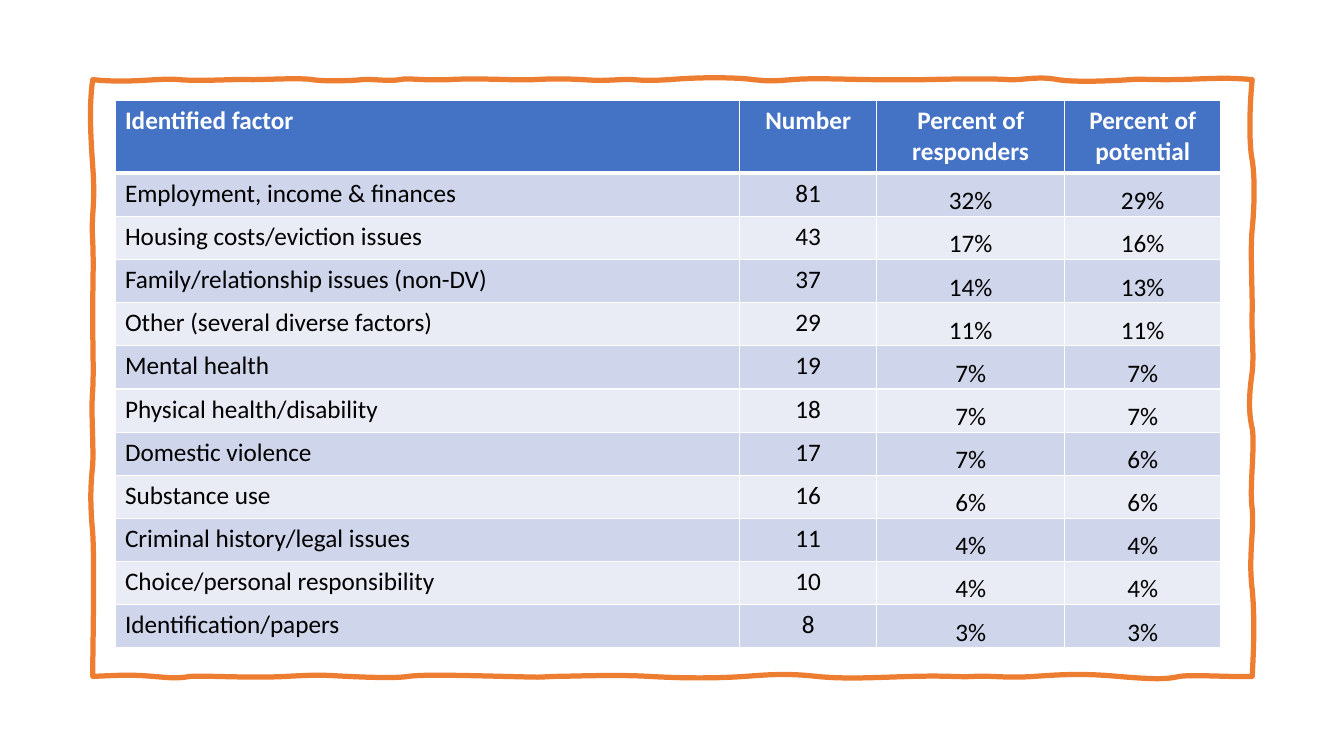
from dataclasses import dataclass

from lxml import etree
from pptx import Presentation
from pptx.dml.color import RGBColor
from pptx.enum.text import MSO_ANCHOR, PP_ALIGN
from pptx.oxml.ns import qn
from pptx.util import Inches, Pt

LEFT, CENTER = PP_ALIGN.LEFT, PP_ALIGN.CENTER
TOP, BOTTOM = MSO_ANCHOR.TOP, MSO_ANCHOR.BOTTOM


@dataclass(frozen=True)
class Theme:
    font: str = "Calibri"
    size: float = 18
    frame: str = "ED7D31"
    frame_width: float = 3.75
    header: str = "4472C4"
    bands: tuple = ("CFD5EA", "E9EBF5")
    text: str = "000000"
    white: str = "FFFFFF"
    rule: float = 1
    header_rule: float = 3


THEME = Theme()

HEADERS = ("Identified factor", "Number", "Percent of responders", "Percent of potential")
FACTORS = [
    ("Employment, income & finances", "81", "32%", "29%"),
    ("Housing costs/eviction issues", "43", "17%", "16%"),
    ("Family/relationship issues (non-DV)", "37", "14%", "13%"),
    ("Other (several diverse factors)", "29", "11%", "11%"),
    ("Mental health", "19", "7%", "7%"),
    ("Physical health/disability", "18", "7%", "7%"),
    ("Domestic violence", "17", "7%", "6%"),
    ("Substance use", "16", "6%", "6%"),
    ("Criminal history/legal issues", "11", "4%", "4%"),
    ("Choice/personal responsibility", "10", "4%", "4%"),
    ("Identification/papers", "8", "3%", "3%"),
]
COLUMN_SHARES = (6.19, 1.36, 1.86, 1.55)
HEADER_HEIGHT = 0.72

# Wobble of each frame edge: one Bezier curve per tuple, as
# (along 1, off 1, along 2, off 2, along end); along in inches, off in 1/100 inch.
BOTTOM_EDGE = [
    (0.25, -1, 0.36, -2, 0.6), (0.84, 2, 0.83, 2, 0.97), (1.12, -1, 1.57, 2, 1.92),
    (2.27, -2, 2.31, -1, 2.53), (2.75, 1, 3, 2, 3.13), (3.26, -2, 3.66, -1, 4.08),
    (4.5, 1, 4.38, 1, 4.57), (4.75, 0, 5.17, -2, 5.52), (5.86, 2, 6.19, 2, 6.47),
    (6.74, -2, 6.9, -3, 7.18), (7.47, 3, 7.77, 1, 8.13), (8.5, -1, 8.58, 1, 8.74),
    (8.9, -1, 9.06, 2, 9.34), (9.62, -2, 9.83, -3, 10.17), (10.52, 3, 10.65, 3, 10.78),
    (10.91, -2, 11.34, 1, 11.5),
]
RIGHT_EDGE = [
    (5.71, 1, 5.39, 3, 5.06), (4.74, -4, 4.47, 2, 4.26), (4.05, -3, 3.63, 3, 3.46),
    (3.3, -4, 3.1, -3, 2.9), (2.7, 2, 2.53, -1, 2.28), (2.03, 0, 1.68, -2, 1.48),
    (1.28, 2, 0.99, 3, 0.8), (0.6, -4, 0.18, -2, 0),
]
TOP_EDGE = [
    (11.2, -3, 10.97, 0, 10.66), (10.36, 0, 10.44, -1, 10.29), (10.13, 1, 9.76, 3, 9.57),
    (9.38, -4, 9.2, 1, 9.08), (8.97, -1, 8.65, -1, 8.25), (7.85, 0, 7.98, 0, 7.76),
    (7.53, 0, 7.15, -2, 6.93), (6.7, 2, 6.67, 1, 6.55), (6.43, -2, 6.06, -3, 5.72),
    (5.37, 2, 5.42, -1, 5.23), (5.03, 1, 5.03, 1, 4.86), (4.68, -1, 4.56, -1, 4.37),
    (4.17, 1, 3.84, -2, 3.53), (3.22, 1, 3.15, -2, 3.04), (2.94, 2, 2.76, -1, 2.67),
    (2.59, 1, 2.3, 2, 2.18), (2.06, -2, 1.72, 0, 1.58), (1.44, -1, 1.08, 2, 0.86),
    (0.64, -2, 0.39, 4, 0),
]
LEFT_EDGE = [
    (0.21, -3, 0.44, -3, 0.86), (1.27, 3, 1.33, -2, 1.6), (1.86, 1, 1.97, 0, 2.34),
    (2.7, 0, 2.88, 1, 3.08), (3.28, -2, 3.62, 1, 3.82), (4.01, -2, 4.17, -3, 4.5),
    (4.83, 2, 5.62, 0, 5.92),
]


def frame_curves(width, height):
    """Return (control 1, control 2, end) points for every curve of the frame."""
    edges = [
        (BOTTOM_EDGE, lambda along, off: (along, height + off)),
        (RIGHT_EDGE, lambda along, off: (width + off, along)),
        (TOP_EDGE, lambda along, off: (along, off)),
        (LEFT_EDGE, lambda along, off: (off, along)),
    ]
    return [(place(a1, o1 / 100), place(a2, o2 / 100), place(end, 0))
            for edge, place in edges for a1, o1, a2, o2, end in edge]


def add_frame(slide, left, top, width, height):
    curves = frame_curves(width, height)
    builder = slide.shapes.build_freeform(Inches(left), Inches(top + height))
    builder.add_line_segments([(Inches(left + x), Inches(top + y)) for _, _, (x, y) in curves])
    sp = builder.convert_to_shape()
    for line, (control1, control2, _) in zip(list(sp._element.iter(qn("a:lnTo"))), curves):
        curve = etree.Element(qn("a:cubicBezTo"))
        for x, y in (control1, control2):
            etree.SubElement(curve, qn("a:pt"), x=str(Inches(x)), y=str(Inches(y)))
        line.getparent().replace(line, curve)
        curve.append(line[0])
    sp.shadow.inherit = False
    sp.fill.background()
    sp.line.color.rgb = RGBColor.from_string(THEME.frame)
    sp.line.width = Pt(THEME.frame_width)


def set_borders(cell, **widths):
    """Draw white borders; widths maps the sides L, R, T and B to points."""
    tc_pr = cell._tc.get_or_add_tcPr()
    for side, width in widths.items():
        ln = etree.SubElement(tc_pr, qn(f"a:ln{side}"), w=str(Pt(width)))
        fill = etree.SubElement(ln, qn("a:solidFill"))
        etree.SubElement(fill, qn("a:srgbClr"), val=THEME.white)


def set_text(cell, text, color=THEME.text, bold=False, align=LEFT, anchor=TOP,
             margins=(0.1, 0.05, 0.1, 0.05)):
    cell.margin_left, cell.margin_top, cell.margin_right, cell.margin_bottom = map(Inches, margins)
    cell.vertical_anchor = anchor
    p = cell.text_frame.paragraphs[0]
    p.alignment = align
    r = p.add_run()
    r.text = text
    r.font.name = THEME.font
    r.font.size = Pt(THEME.size)
    r.font.bold = bold
    r.font.color.rgb = RGBColor.from_string(color)


def add_factor_table(slide, left, top, width, height):
    rows = [HEADERS, *FACTORS]
    row_height = (height - HEADER_HEIGHT) / len(FACTORS)
    table = slide.shapes.add_table(len(rows), len(HEADERS), Inches(left), Inches(top),
                                   Inches(width), Inches(height)).table
    for column, share in zip(table.columns, COLUMN_SHARES):
        column.width = Inches(width * share / sum(COLUMN_SHARES))
    for i, values in enumerate(rows):
        is_header = i == 0
        table.rows[i].height = Inches(HEADER_HEIGHT if is_header else row_height)
        fill = THEME.header if is_header else THEME.bands[(i - 1) % 2]
        for j, value in enumerate(values):
            cell = table.cell(i, j)
            set_borders(cell, L=THEME.rule, R=THEME.rule,
                        T=THEME.header_rule if i == 1 else THEME.rule,
                        B=THEME.header_rule if is_header else THEME.rule)
            cell.fill.solid()
            cell.fill.fore_color.rgb = RGBColor.from_string(fill)
            style = {"align": CENTER if j else LEFT}
            if is_header:
                style.update(color=THEME.white, bold=True)
            elif j >= 2:
                style.update(anchor=BOTTOM, margins=(0.01, 0.01, 0.01, 0))
            set_text(cell, value, **style)


def main():
    prs = Presentation()
    prs.slide_width, prs.slide_height = Inches(13.33), Inches(7.5)
    slide = prs.slides.add_slide(prs.slide_layouts.get_by_name("Blank"))
    add_frame(slide, 0.92, 0.79, 11.5, 5.92)
    add_factor_table(slide, 1.14, 1, 10.97, 5.43)
    prs.save("out.pptx")


if __name__ == "__main__":
    main()
